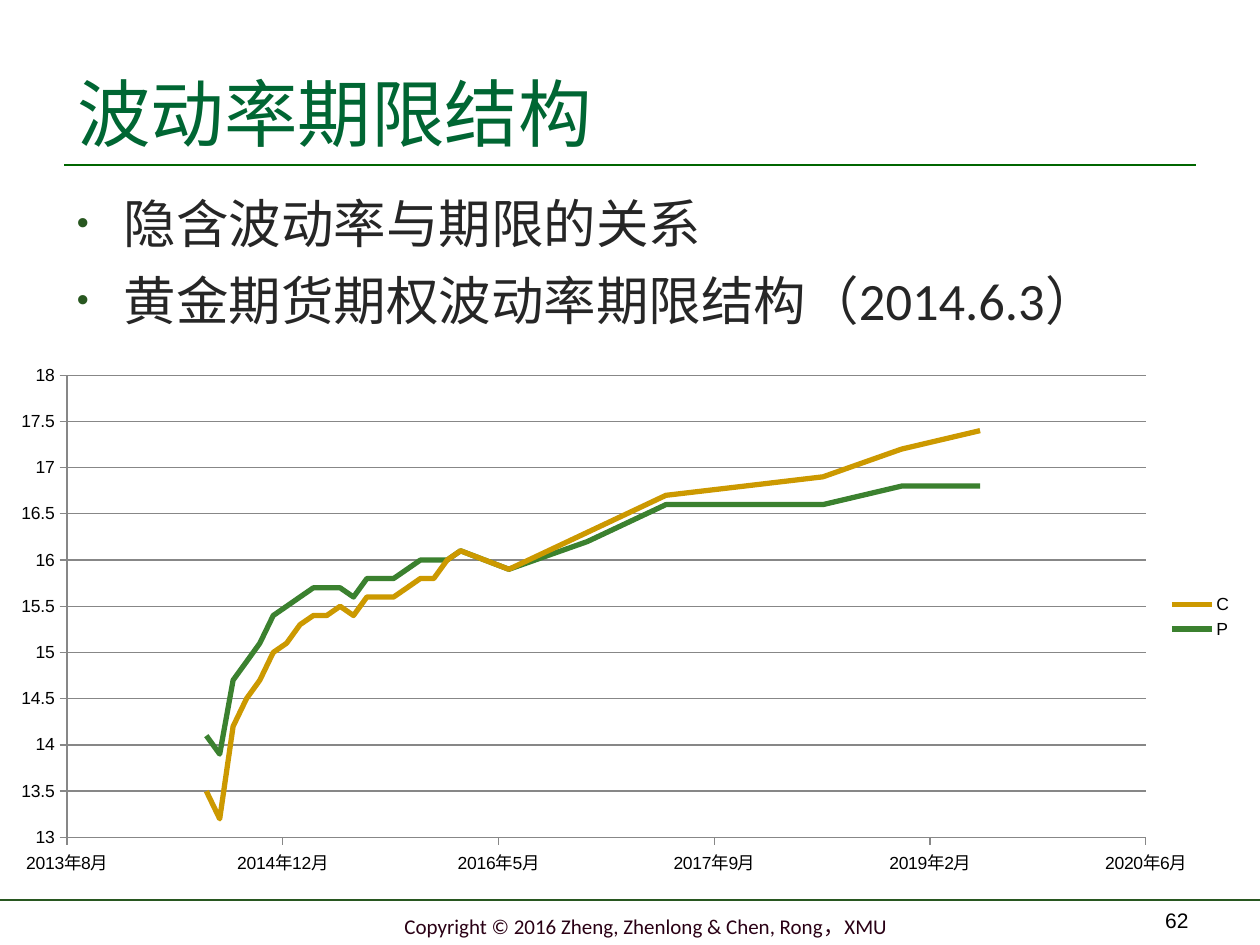
import pptx
import pptx.chart.data
import pptx.dml.color
import pptx.enum.chart
import pptx.enum.shapes
import pptx.enum.text
import pptx.oxml
import pptx.oxml.ns
import pptx.util
from pptx.util import Cm, Pt

ALIGN = pptx.enum.text.PP_ALIGN
ANCHOR = pptx.enum.text.MSO_ANCHOR
DARK_GREEN = "285720"

# Twenty monthly expiries, then seven half-yearly ones, as date serials
EXPIRIES = [41823 + 31 * month for month in range(20)]
EXPIRIES += [42524 + 182 * half for half in range(7)]
VOLATILITIES = {
    "C": ("CC9900", [13.5, 13.2, 14.2, 14.5, 14.7, 15, 15.1, 15.3, 15.4,
                     15.4, 15.5, 15.4, 15.6, 15.6, 15.6, 15.7, 15.8, 15.8,
                     16, 16.1, 15.9, 16.3, 16.7, 16.8, 16.9, 17.2, 17.4]),
    "P": ("3B812F", [14.1, 13.9, 14.7, 14.9, 15.1, 15.4, 15.5, 15.6, 15.7,
                     15.7, 15.7, 15.6, 15.8, 15.8, 15.8, 15.9, 16, 16,
                     16, 16.1, 15.9, 16.2, 16.6, 16.6, 16.6, 16.8, 16.8]),
}


def color(code):
    return pptx.dml.color.RGBColor.from_string(code)


def add_xml(parent, tag, **attributes):
    element = pptx.oxml.parse_xml(f"<{tag} {pptx.oxml.ns.nsdecls(tag.split(':')[0])}/>")
    for name, value in attributes.items():
        element.set(name, value)
    parent.append(element)
    return element


def set_font(font, size, code, name):
    font.size = Pt(size)
    font.name = name
    font.color.rgb = color(code)


def place(shape, left, top, width, height):
    shape.left, shape.top = Cm(left), Cm(top)
    shape.width, shape.height = Cm(width), Cm(height)


def add_rule(slide, left, top, right, code):
    rule = slide.shapes.add_connector(
        pptx.enum.shapes.MSO_CONNECTOR.STRAIGHT, Cm(left), Cm(top), Cm(right), Cm(top))
    rule.line.color.rgb = color(code)
    rule.line.width = Pt(1)
    add_xml(rule._element.spPr, "a:effectLst")


def set_title(slide, text):
    title = slide.shapes.title
    place(title, 1.3, 0.91, 22.86, 2.36)
    title.text_frame.text = text
    title.text_frame.vertical_anchor = ANCHOR.BOTTOM
    para = title.text_frame.paragraphs[0]
    para.alignment = ALIGN.LEFT
    set_font(para.font, 42, "006633", "Calibri")


def add_footer(slide, bounds, text, alignment, code, font_name):
    box = slide.shapes.add_textbox(*(Cm(length) for length in bounds))
    box.text_frame.word_wrap = True
    box.text_frame.vertical_anchor = ANCHOR.BOTTOM
    para = box.text_frame.paragraphs[0]
    para.text = text
    para.alignment = alignment
    set_font(para.font, 12, code, font_name)


def add_bullets(slide, lines):
    box = slide.shapes.add_textbox(Cm(1.3), Cm(3.73), Cm(22.86), Cm(12.19))
    frame = box.text_frame
    frame.word_wrap = True
    for index, line in enumerate(lines):
        para = frame.add_paragraph() if index else frame.paragraphs[0]
        para.text = line
        properties = para._p.get_or_add_pPr()
        properties.set("marL", str(Cm(0.95)))
        properties.set("indent", str(Cm(-0.95)))
        bullet_color = add_xml(properties, "a:buClr")
        add_xml(bullet_color, "a:srgbClr", val=DARK_GREEN)
        add_xml(properties, "a:buSzPct", val="65000")
        add_xml(properties, "a:buFont", typeface="Arial")
        add_xml(properties, "a:buChar", char="•")
        if index:
            para.space_before = Pt(8)
        set_font(para.font, 30, "262626", "Calibri")


def format_axis(axis, low, high, step, number_format):
    axis.minimum_scale, axis.maximum_scale, axis.major_unit = low, high, step
    axis.major_tick_mark = pptx.enum.chart.XL_TICK_MARK.OUTSIDE
    axis.tick_labels.number_format = number_format
    axis.tick_labels.number_format_is_linked = False
    axis.format.line.color.rgb = color("878787")


def set_plot_area(chart, **fractions):
    plot_area = chart._chartSpace.chart.plotArea
    for old in plot_area.findall(pptx.oxml.ns.qn("c:layout")):
        plot_area.remove(old)
    layout = add_xml(plot_area, "c:layout")
    plot_area.insert(0, layout)
    manual = add_xml(layout, "c:manualLayout")
    add_xml(manual, "c:layoutTarget", val="inner")
    for mode in ("xMode", "yMode"):
        add_xml(manual, f"c:{mode}", val="edge")
    for name, value in fractions.items():
        add_xml(manual, f"c:{name}", val=str(value))


def add_volatility_chart(slide):
    data = pptx.chart.data.XyChartData()
    for name, (_, values) in VOLATILITIES.items():
        series = data.add_series(name)
        for expiry, value in zip(EXPIRIES, values):
            series.add_data_point(expiry, value)
    chart = slide.shapes.add_chart(
        pptx.enum.chart.XL_CHART_TYPE.XY_SCATTER_SMOOTH_NO_MARKERS,
        Cm(0.1), Cm(7.14), Cm(25), Cm(10.59), data).chart
    chart.has_title = False
    set_font(chart.font, 10, "000000", "Arial")
    chart.plots[0].vary_by_categories = False

    # Axes, gridlines and legend
    format_axis(chart.category_axis, 41500, 44000, 500, 'yyyy"年"m"月"')
    format_axis(chart.value_axis, 13, 18, 0.5, "General")
    chart.category_axis.has_major_gridlines = False
    chart.value_axis.has_major_gridlines = True
    chart.value_axis.major_gridlines.format.line.color.rgb = color("878787")
    chart.has_legend = True
    chart.legend.position = pptx.enum.chart.XL_LEGEND_POSITION.RIGHT
    chart.legend.include_in_layout = False
    set_plot_area(chart, x=0.05, y=0.04, w=0.87, h=0.88)

    for series, (code, _) in zip(chart.plots[0].series, VOLATILITIES.values()):
        series.smooth = True
        series.marker.style = pptx.enum.chart.XL_MARKER_STYLE.NONE
        series.format.line.color.rgb = color(code)
        series.format.line.width = Pt(3)


def main():
    deck = pptx.Presentation()
    deck.slide_width, deck.slide_height = Cm(25.4), Cm(19.05)
    slide = deck.slides.add_slide(deck.slide_layouts[5])

    # Rules and footer
    add_rule(slide, 0, 18.14, 25.4, DARK_GREEN)
    add_rule(slide, 1.3, 3.33, 24.1, "006600")
    add_footer(slide, (7.11, 18.26, 11.81, 0.79),
               "Copyright © 2016 Zheng, Zhenlong & Chen, Rong，XMU",
               ALIGN.CENTER, "2A0015", "Calibri")
    add_footer(slide, (18.29, 18.14, 5.92, 0.79), "62", ALIGN.RIGHT, "000000", "Arial")

    # Content
    set_title(slide, "波动率期限结构")
    add_bullets(slide, ["隐含波动率与期限的关系", "黄金期货期权波动率期限结构（2014.6.3）"])
    add_volatility_chart(slide)
    deck.save("out.pptx")


if __name__ == "__main__":
    main()
